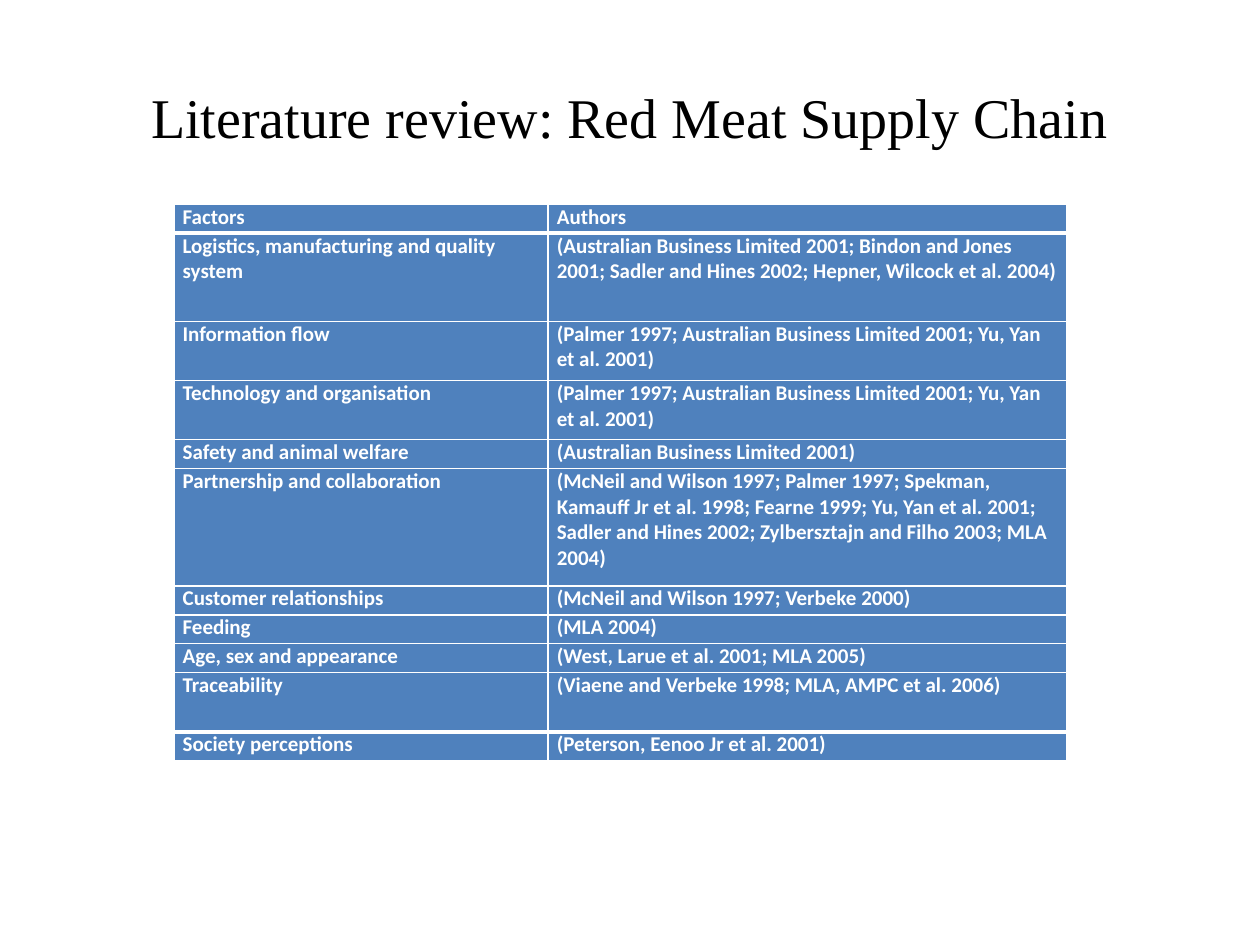
from dataclasses import dataclass

from lxml.etree import SubElement
from pptx import Presentation
from pptx.dml.color import RGBColor
from pptx.enum.text import MSO_ANCHOR as Anchor, PP_ALIGN as Align
from pptx.oxml.ns import qn
from pptx.util import Inches, Pt


@dataclass(frozen=True)
class Theme:
    title_font: str = "Times New Roman"
    body_font: str = "Calibri"
    title_size: int = 32
    body_size: int = 12
    title_color: str = "000000"
    body_color: str = "FFFFFF"
    cell_fill: str = "4F81BD"
    border_color: str = "FFFFFF"
    thin_border: int = 1
    thick_border: int = 3


# Factor, authors, row height in inches
ROWS = [
    ("Factors", "Authors", 0.23),
    ("Logistics, manufacturing and quality system",
     "(Australian Business Limited 2001; Bindon and Jones 2001; "
     "Sadler and Hines 2002; Hepner, Wilcock et al. 2004)", 0.7),
    ("Information flow",
     "(Palmer 1997; Australian Business Limited 2001; Yu, Yan et al. 2001)", 0.47),
    ("Technology and organisation",
     "(Palmer 1997; Australian Business Limited 2001; Yu, Yan et al. 2001)", 0.47),
    ("Safety and animal welfare", "(Australian Business Limited 2001)", 0.23),
    ("Partnership and collaboration",
     "(McNeil and Wilson 1997; Palmer 1997; Spekman, Kamauff Jr et al. 1998; "
     "Fearne 1999; Yu, Yan et al. 2001; Sadler and Hines 2002; "
     "Zylbersztajn and Filho 2003; MLA 2004)", 0.93),
    ("Customer relationships", "(McNeil and Wilson 1997; Verbeke 2000)", 0.23),
    ("Feeding", "(MLA 2004)", 0.23),
    ("Age, sex and appearance", "(West, Larue et al. 2001; MLA 2005)", 0.23),
    ("Traceability", "(Viaene and Verbeke 1998; MLA, AMPC et al. 2006)", 0.47),
    ("Society perceptions", "(Peterson, Eenoo Jr et al. 2001)", 0.23),
]
COLUMN_WIDTHS = (2.97, 4.12)


class SlideBuilder:
    def __init__(self, slide, theme):
        self.slide = slide
        self.theme = theme

    def add_text(self, text_frame, text, color, align, **font_format):
        paragraph = text_frame.paragraphs[0]
        paragraph.alignment = align
        run = paragraph.add_run()
        run.text = text
        for name, value in font_format.items():
            setattr(run.font, name, value)
        run.font.color.rgb = RGBColor.from_string(color)

    def title(self, text, left, top, width, height):
        box = self.slide.shapes.add_textbox(
            Inches(left), Inches(top), Inches(width), Inches(height))
        frame = box.text_frame
        frame.word_wrap = True
        frame.vertical_anchor = Anchor.MIDDLE
        self.add_text(frame, text, self.theme.title_color, Align.CENTER,
                      name=self.theme.title_font, size=Pt(self.theme.title_size))

    def border(self, cell, side, width):
        line = SubElement(cell._tc.get_or_add_tcPr(), qn(f"a:ln{side}"),
                          w=str(Pt(width)))
        fill = SubElement(line, qn("a:solidFill"))
        SubElement(fill, qn("a:srgbClr"), val=self.theme.border_color)

    def cell(self, cell, text, align, thick_sides):
        cell_format = {
            "margin_left": Inches(0.07), "margin_right": Inches(0.07),
            "margin_top": 0, "margin_bottom": 0,
            "vertical_anchor": Anchor.TOP,
        }
        for name, value in cell_format.items():
            setattr(cell, name, value)
        # Borders come before the fill in the cell properties
        for side in "LRTB":
            thick = side in thick_sides
            self.border(cell, side, self.theme.thick_border if thick
                        else self.theme.thin_border)
        cell.fill.solid()
        cell.fill.fore_color.rgb = RGBColor.from_string(self.theme.cell_fill)
        self.add_text(cell.text_frame, text, self.theme.body_color, align,
                      name=self.theme.body_font, size=Pt(self.theme.body_size),
                      bold=True)

    def table(self, rows, column_widths, left, top):
        height = sum(row[-1] for row in rows)
        table = self.slide.shapes.add_table(
            len(rows), len(column_widths), Inches(left), Inches(top),
            Inches(sum(column_widths)), Inches(height)).table
        for column, width in zip(table.columns, column_widths):
            column.width = Inches(width)
        # Thick rules sit below the header and above the last row
        last = len(rows) - 1
        thick_sides = {0: "B", 1: "T", last - 1: "B", last: "T"}
        for index, (*texts, row_height) in enumerate(rows):
            table.rows[index].height = Inches(row_height)
            align = Align.JUSTIFY if index == 0 else Align.LEFT
            for column, text in enumerate(texts):
                self.cell(table.cell(index, column), text, align,
                          thick_sides.get(index, ""))


def main():
    presentation = Presentation()
    presentation.slide_width = Inches(10)
    presentation.slide_height = Inches(7.5)
    slide = presentation.slides.add_slide(presentation.slide_layouts[6])
    builder = SlideBuilder(slide, Theme())

    # Heading
    builder.title("Literature review: Red Meat Supply Chain", 0.5, 0.3, 9, 1.25)

    # Factors and the authors who discuss them
    builder.table(ROWS, COLUMN_WIDTHS, 1.38, 1.62)

    presentation.save("out.pptx")


if __name__ == "__main__":
    main()
